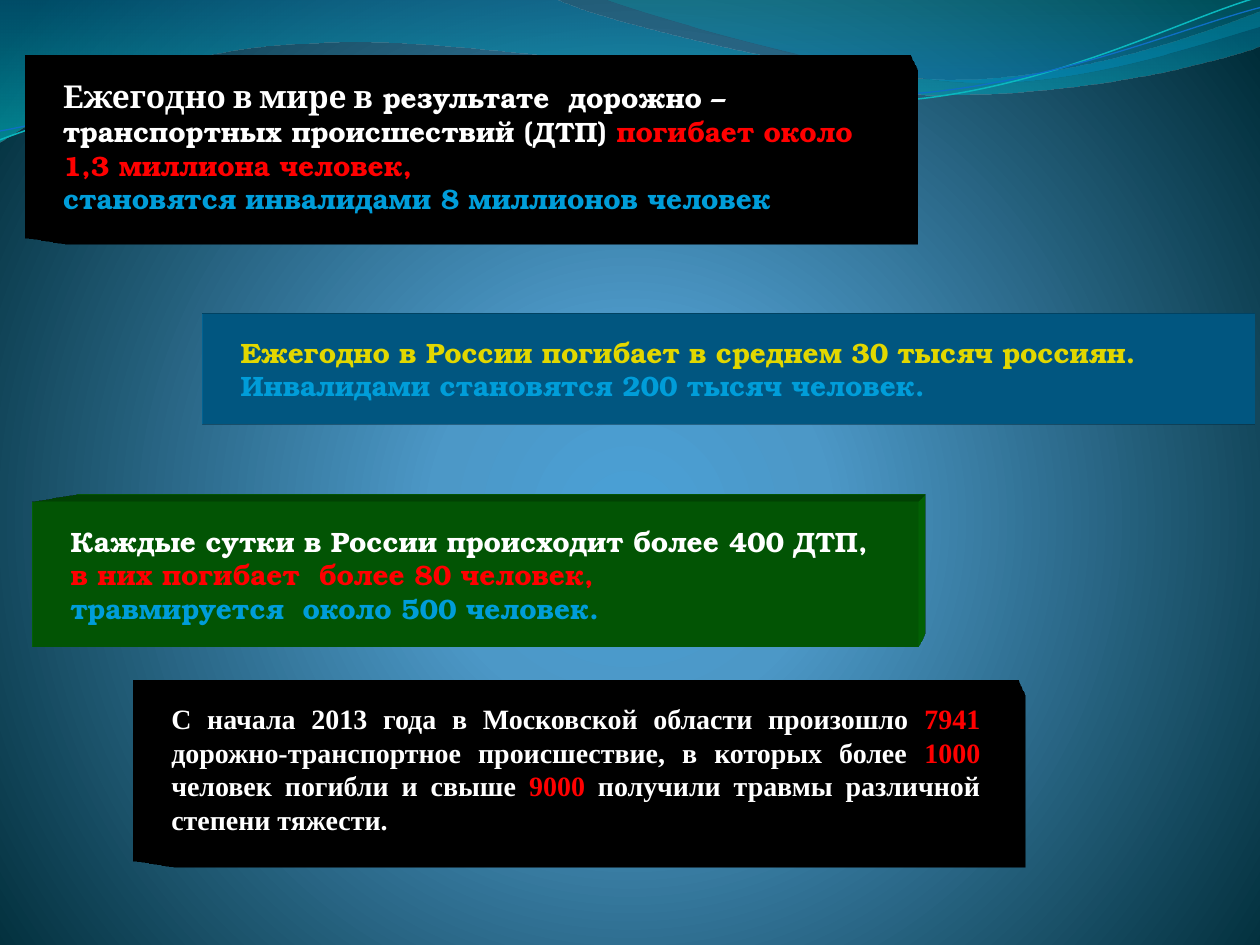
"""Build a slide of road accident statistics: four solid panels over a wavy blue background."""
from math import cos, radians, sin

from pptx import Presentation
from pptx.dml.color import RGBColor as RGB
from pptx.enum.shapes import MSO_SHAPE as SHAPE
from pptx.enum.text import MSO_ANCHOR as ANCHOR, MSO_AUTO_SIZE as FIT, PP_ALIGN as ALIGN
from pptx.oxml import parse_xml
from pptx.oxml.ns import nsdecls, qn
from pptx.util import Inches, Pt

COLORS = {
    "white": "FFFFFF", "red": "FF0000", "sky": "009DD9", "yellow": "E2D700",
    "black": "000000", "blue": "0170A7", "green": "026E05",
    "teal_line": "0AB8BF", "blue_line": "0F6FC6",
}
BACKGROUND = [(0, "4AA0D6", 100), (25, "4C98C7", 100), (100, "002C38", 100)]
RADIAL = '<a:path path="circle"><a:fillToRect l="10000" t="110000" r="10000" b="100000"/></a:path>'
DOWNWARD = '<a:lin ang="5400000" scaled="0"/>'

WAVES = [
    {"at": (-0.01, -0.01, 10.02, 1.14),
     "outline": [(0, 0), (4.4, -0.01), (4.76, 0.17, 6.64, 0.63, 7.58, 0.63),
                 (8.53, 0.63, 9.58, 0.26, 10, 0.09), (10.01, 0.36),
                 (9.83, 0.44, 8.7, 0.76, 7.46, 0.75), (6.22, 0.75, 3.82, 0.28, 2.57, 0.34),
                 (1.29, 0.36, 0.46, 0.83, -0.01, 1.13), (0, 0)],
     "stops": [(0, "0074A1", 45), (100, "00C6CF", 55)]},
    {"at": (4.79, -0.01, 5.21, 0.7),
     "outline": [(4.79, -0.01), (5.09, 0.11, 6.82, 0.62, 7.69, 0.65),
                 (8.56, 0.69, 9.61, 0.32, 10, 0.21), (10, 0), (4.79, -0.01)],
     "stops": [(0, "00A1A9", 30), (80, "008BBF", 45)]},
]
STRAND_TURN = -2.7
STRANDS = [
    {"at": (-0.02, 0.22, 10.02, 0.71), "color": "teal_line", "width": 0.85,
     "outline": [(0, 1.11), (0.48, 0.93, 1.58, 0.57, 2.77, 0.52),
                 (3.95, 0.47, 5.93, 0.89, 7.13, 0.8), (8.33, 0.71, 9.38, 0.15, 9.98, -0.02)]},
    {"at": (-0.02, 0.3, 10.03, 0.58), "color": "blue_line", "width": 0.75,
     "outline": [(0, 1.04), (0.47, 0.96, 1.64, 0.61, 2.83, 0.56),
                 (4.03, 0.51, 5.97, 0.84, 7.17, 0.75), (8.36, 0.67, 9.41, 0.21, 10, 0.06)]},
]

BONUM, CAMBRIA, TIMES = "TeX Gyre Bonum", "Cambria", "Times New Roman"
PANELS = [
    {"at": (0.2, 0.44, 7.02, 1.44), "fill": "black", "view": "BottomRight", "font": BONUM,
     "text": [
         [("Ежегодно в мире в", "white", CAMBRIA, 18),
          (" результате  дорожно – транспортных происшествий (ДТП) ", "white"),
          ("погибает около 1,3 миллиона человек,", "red")],
         [("становятся инвалидами 8 миллионов человек", "sky")]]},
    {"at": (0.26, 3.99, 7.02, 1.14), "fill": "green", "view": "TopRight", "font": BONUM,
     "text": [
         [("Каждые сутки в России происходит более 400 ДТП,", "white")],
         [("в них погибает  более 80 человек,", "red")],
         [("травмируется  около 500 человек.", "sky")]]},
    {"at": (1.61, 2.49, 8.35, 0.88), "fill": "blue", "view": "Front", "font": BONUM,
     "text": [
         [("Ежегодно в России погибает в среднем 30 тысяч россиян.", "yellow")],
         [("Инвалидами становятся 200 тысяч человек.", "sky")]]},
    {"at": (1.06, 5.4, 7.02, 1.42), "fill": "black", "view": "BottomRight", "font": TIMES,
     "align": ALIGN.JUSTIFY,
     "text": [
         [("С начала 2013 года в Московской области произошло ", "white"), ("7941", "red"),
          (" дорожно-транспортное происшествие, в которых более ", "white"), ("1000", "red"),
          (" человек погибли и свыше ", "white"), ("9000", "red"),
          (" получили травмы различной степени тяжести.", "white")]]},
]
EXTRUSION = Inches(0.47)


def rgb(name):
    return RGB.from_string(COLORS[name])


def set_gradient(fill, holder, stops, direction):
    fill.gradient()
    old = holder.find(".//" + qn("a:gradFill"))
    items = "".join(
        f'<a:gs pos="{pos * 1000}"><a:srgbClr val="{color}"><a:alpha val="{alpha * 1000}"/></a:srgbClr></a:gs>'
        for pos, color, alpha in stops)
    old.getparent().replace(old, parse_xml(
        f'<a:gradFill {nsdecls("a")} rotWithShape="1"><a:gsLst>{items}</a:gsLst>{direction}</a:gradFill>'))


def add_curve(slide, curve, turn=0, closed=False):
    left, top, width, height = curve["at"]
    builder = slide.shapes.build_freeform(Inches(left), Inches(top))
    builder.add_line_segments([(Inches(left + width), Inches(top + height))], close=False)
    sp = builder.convert_to_shape()
    sp.shadow.inherit = False
    sp.rotation = turn % 360
    cx, cy = left + width / 2, top + height / 2
    ca, sa = cos(radians(-turn)), sin(radians(-turn))

    def point(x, y):
        dx, dy = x - cx, y - cy
        px, py = dx * ca - dy * sa + cx - left, dx * sa + dy * ca + cy - top
        return f'<a:pt x="{Inches(px)}" y="{Inches(py)}"/>'

    outline = sp.element.spPr.find(".//" + qn("a:path"))
    for child in list(outline):
        outline.remove(child)
    for i, step in enumerate(curve["outline"]):
        tag = "moveTo" if i == 0 else "lnTo" if len(step) == 2 else "cubicBezTo"
        points = "".join(point(x, y) for x, y in zip(step[::2], step[1::2]))
        outline.append(parse_xml(f'<a:{tag} {nsdecls("a")}>{points}</a:{tag}>'))
    if closed:
        outline.append(parse_xml(f'<a:close {nsdecls("a")}/>'))
    return sp


def extrude(sp, panel):
    color = COLORS[panel["fill"]]
    sp.element.spPr.append(parse_xml(
        f'<a:scene3d {nsdecls("a")}><a:camera prst="legacyPerspective{panel["view"]}"/>'
        '<a:lightRig rig="legacyFlat3" dir="b"/></a:scene3d>'))
    sp.element.spPr.append(parse_xml(
        f'<a:sp3d {nsdecls("a")} extrusionH="{EXTRUSION}" prstMaterial="legacyMatte">'
        f'<a:extrusionClr><a:srgbClr val="{color}"/></a:extrusionClr></a:sp3d>'))


def add_panel(slide, panel):
    sp = slide.shapes.add_shape(SHAPE.RECTANGLE, *map(Inches, panel["at"]))
    sp.shadow.inherit = False
    sp.fill.solid()
    sp.fill.fore_color.rgb = rgb(panel["fill"])
    sp.line.fill.background()
    extrude(sp, panel)
    tf = sp.text_frame
    tf.word_wrap = True
    tf.auto_size = FIT.SHAPE_TO_FIT_TEXT
    tf.vertical_anchor = ANCHOR.TOP
    tf.margin_left = tf.margin_right = Inches(0.3)
    tf.margin_top = tf.margin_bottom = Inches(0.17)
    for i, runs in enumerate(panel["text"]):
        p = tf.add_paragraph() if i else tf.paragraphs[0]
        p.alignment = panel.get("align", ALIGN.LEFT)
        for text, color, *style in runs:
            r = p.add_run()
            r.text = text
            r.font.name, size = style or (panel["font"], 16)
            r.font.size = Pt(size)
            r.font.bold = True
            r.font.color.rgb = rgb(color)


def main():
    prs = Presentation()
    prs.slide_width, prs.slide_height = Inches(10), Inches(7.5)
    slide = prs.slides.add_slide(prs.slide_layouts[6])
    set_gradient(slide.background.fill, slide.element, BACKGROUND, RADIAL)
    for wave in WAVES:
        sp = add_curve(slide, wave, closed=True)
        sp.line.fill.background()
        set_gradient(sp.fill, sp.element.spPr, wave["stops"], DOWNWARD)
    for strand in STRANDS:
        sp = add_curve(slide, strand, STRAND_TURN)
        sp.fill.background()
        sp.line.color.rgb = rgb(strand["color"])
        sp.line.width = Pt(strand["width"])
    for panel in PANELS:
        add_panel(slide, panel)
    prs.save("out.pptx")


if __name__ == "__main__":
    main()
